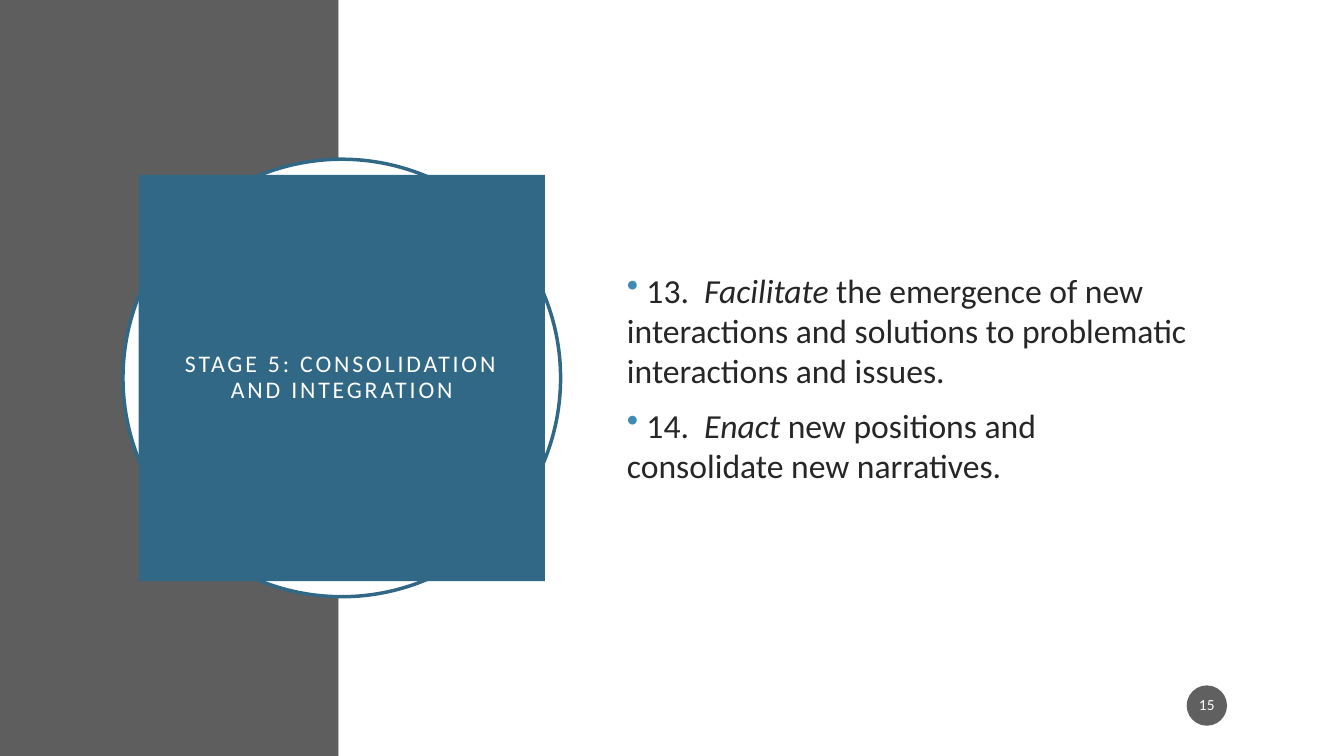
import pptx
import pptx.util
import pptx.dml.color
import pptx.enum.shapes
import pptx.enum.text
import pptx.oxml.ns
from lxml import etree

RGBColor = pptx.dml.color.RGBColor
Inches, Pt = pptx.util.Inches, pptx.util.Pt
MSO_SHAPE = pptx.enum.shapes.MSO_SHAPE
PP_ALIGN = pptx.enum.text.PP_ALIGN
MIDDLE = pptx.enum.text.MSO_ANCHOR.MIDDLE
qn = pptx.oxml.ns.qn

GRAY = RGBColor(0x5E, 0x5E, 0x5E)
WHITE = RGBColor(0xFF, 0xFF, 0xFF)
BLUE = RGBColor(0x31, 0x68, 0x86)
BULLET_BLUE = RGBColor(0x41, 0x8A, 0xB3)
INK = RGBColor(0x26, 0x26, 0x26)
BADGE = RGBColor(0x1D, 0x1D, 0x1D)

FONT = "Calibri"
WIDTH, HEIGHT = 13.33, 7.5
PANEL = 3.36 / WIDTH  # share of the width taken by the gray panel

STEPS = [
    (" 13.  ", "Facilitate", " the emergence of new interactions and solutions"
     " to problematic interactions and issues."),
    (" 14.  ", "Enact", " new positions and consolidate new narratives."),
]


def add_filled(slide, kind, left, top, width, height, fill, outline=None):
    """Add a flat shape; lengths are in inches."""
    shape = slide.shapes.add_shape(
        kind, Inches(left), Inches(top), Inches(width), Inches(height))
    shape.shadow.inherit = False
    shape.fill.solid()
    shape.fill.fore_color.rgb = fill
    if outline is None:
        shape.line.fill.background()
    else:
        shape.line.color.rgb = outline
        shape.line.width = Pt(2.5)
    return shape


def add_centred(slide, kind, x_share, y_share, side, fill, outline=None):
    """Add a shape of equal sides around a point given as slide shares."""
    return add_filled(slide, kind, x_share * WIDTH - side / 2,
                      y_share * HEIGHT - side / 2, side, side, fill, outline)


def set_font(paragraph, size, color):
    paragraph.font.name = FONT
    paragraph.font.size = Pt(size)
    paragraph.font.color.rgb = color


def write_label(shape, text, size, inset_x, inset_y):
    """Write one centred white paragraph inside a shape."""
    frame = shape.text_frame
    frame.word_wrap = True
    frame.vertical_anchor = MIDDLE
    frame.margin_left = frame.margin_right = Inches(inset_x)
    frame.margin_top = frame.margin_bottom = Inches(inset_y)
    label = frame.paragraphs[0]
    label.text = text
    label.alignment = PP_ALIGN.CENTER
    label.line_spacing = 0.9
    set_font(label, size, WHITE)
    return label


def add_bullet(paragraph):
    """Hang a coloured bullet in front of a paragraph."""
    props = paragraph._p.get_or_add_pPr()
    props.set("marL", "0")
    props.set("indent", str(-Inches(0.25)))
    color = etree.Element(qn("a:buClr"))
    etree.SubElement(color, qn("a:srgbClr"), val=str(BULLET_BLUE))
    mark = etree.Element(qn("a:buChar"), char="•")
    # Bullet elements come after the spacing and before the default font
    font = props.find(qn("a:defRPr"))
    font.addprevious(color)
    font.addprevious(mark)


def add_steps(slide, left, top, width, height, steps):
    box = slide.shapes.add_textbox(
        Inches(left), Inches(top), Inches(width), Inches(height))
    frame = box.text_frame
    frame.word_wrap = True
    frame.vertical_anchor = MIDDLE
    for index, (number, verb, rest) in enumerate(steps):
        step = frame.add_paragraph() if index else frame.paragraphs[0]
        step.space_before = Pt(10)
        set_font(step, 24, INK)
        for part in (number, verb, rest):
            run = step.add_run()
            run.text = part
            run.font.italic = part == verb
        add_bullet(step)


def main():
    deck = pptx.Presentation()
    deck.slide_width, deck.slide_height = Inches(WIDTH), Inches(HEIGHT)
    slide = deck.slides.add_slide(deck.slide_layouts[6])

    # Side panel and white content area
    panel = PANEL * WIDTH
    add_filled(slide, MSO_SHAPE.RECTANGLE, 0, 0, panel, HEIGHT, GRAY)
    add_filled(slide, MSO_SHAPE.RECTANGLE, panel, 0, WIDTH - panel, HEIGHT, WHITE)

    # Ring with the stage title on a square
    centre = 3.39 / WIDTH
    add_centred(slide, MSO_SHAPE.OVAL, centre, 0.5, 4.34, WHITE, BLUE)
    stage = add_centred(slide, MSO_SHAPE.RECTANGLE, centre, 0.5, 4.03, BLUE)
    title = write_label(
        stage, "STAGE 5: CONSOLIDATION AND INTEGRATION", 17, 0.2, 0.2)
    title.runs[0].font._element.set("spc", "200")

    # Steps of the stage
    add_steps(slide, 6.12, 1.53, 5.82, 4.43, STEPS)

    # Page number badge, 70 % opaque
    badge = add_centred(slide, MSO_SHAPE.OVAL, 11.97 / WIDTH, 7 / HEIGHT, 0.4, BADGE)
    tint = badge._element.spPr.find(qn("a:solidFill"))[0]
    etree.SubElement(tint, qn("a:alpha"), val="70000")
    page = write_label(badge, "15", 11, 0.02, 0.05)
    page.space_after = Pt(6)

    deck.save("out.pptx")


if __name__ == "__main__":
    main()
